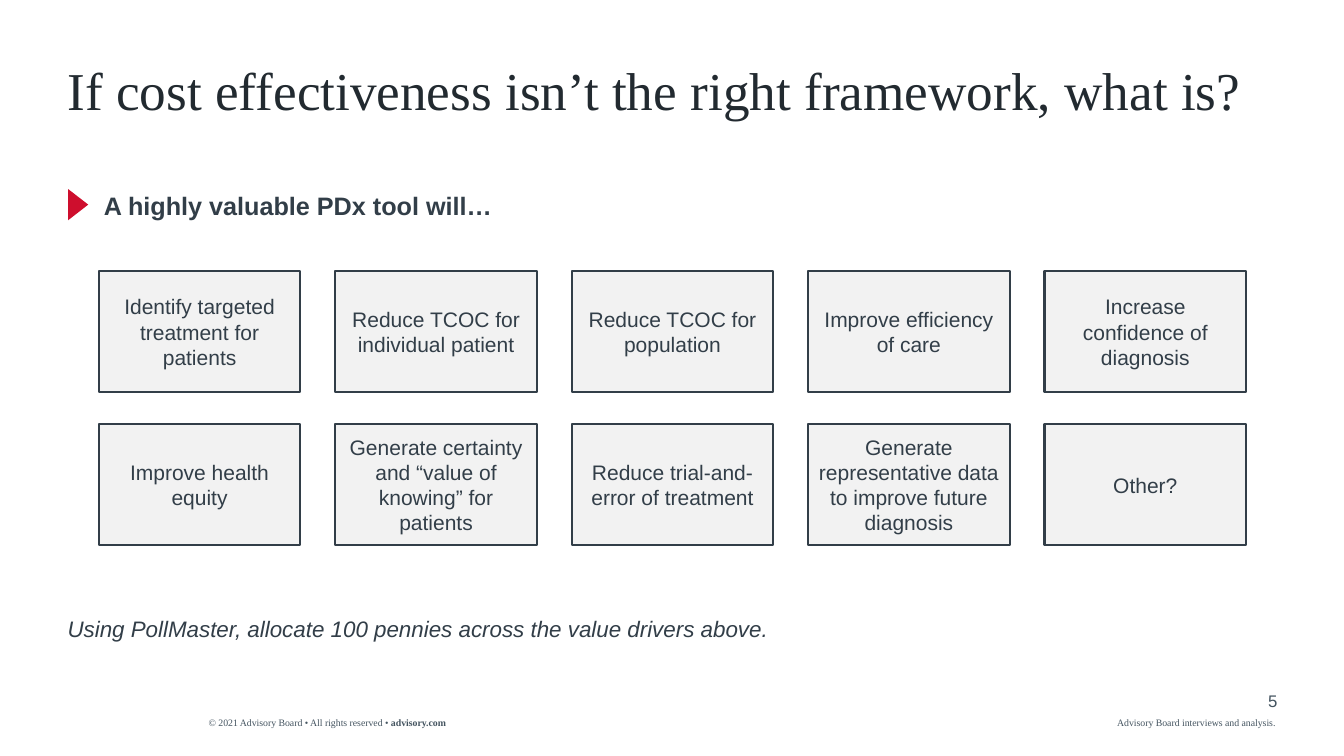
"""Build the slide on value drivers for a PDx tool."""
from dataclasses import dataclass

import pptx
import pptx.dml.color
import pptx.enum.shapes
import pptx.enum.text
import pptx.util

Inches = pptx.util.Inches
RGBColor = pptx.dml.color.RGBColor
ALIGN = pptx.enum.text.PP_ALIGN
ANCHOR = pptx.enum.text.MSO_ANCHOR
SHAPE = pptx.enum.shapes.MSO_SHAPE

INK = RGBColor(0x22, 0x2A, 0x30)
SLATE = RGBColor(0x32, 0x3E, 0x48)
GRAY = RGBColor(0x44, 0x54, 0x60)
PALE = RGBColor(0xF2, 0xF2, 0xF2)
RED = RGBColor(0xCE, 0x0E, 0x2D)
SANS = "Arial"
SERIF = "Times New Roman"

COLUMNS = 5
GRID_LEFT, GRID_TOP = 0.98, 2.69
STEP_X, STEP_Y = 2.345, 1.52
BOX_W, BOX_H = 2, 1.2

DRIVERS = [
    "Identify targeted treatment for patients",
    "Reduce TCOC for individual patient",
    "Reduce TCOC for population",
    "Improve efficiency of care",
    "Increase confidence of diagnosis",
    "Improve health equity",
    "Generate certainty and “value of knowing” for patients",
    "Reduce trial-and-error of treatment",
    "Generate representative data to improve future diagnosis",
    "Other?",
]


@dataclass
class Label:
    text: str
    left: float
    top: float
    width: float
    height: float
    size: float
    font: str = SANS
    color: RGBColor = SLATE
    bold: bool = False
    italic: bool = False
    align: ALIGN = ALIGN.LEFT
    anchor: ANCHOR = ANCHOR.TOP
    bold_tail: str = ""


LABELS = [
    Label("© 2021 Advisory Board • All rights reserved • ", 2.07, 7.11, 3.26, 0.12, 7,
          font=SERIF, color=GRAY, bold_tail="advisory.com"),
    Label("Advisory Board interviews and analysis.", 11.08, 7.11, 1.59, 0.12, 7,
          font=SERIF, color=GRAY),
    Label("5", 12.17, 6.85, 0.5, 0.2, 12, color=GRAY, align=ALIGN.RIGHT),
    Label("A highly valuable PDx tool will…", 1.03, 1.89, 11.14, 0.3, 18,
          bold=True, anchor=ANCHOR.BOTTOM),
    Label("Using PollMaster, allocate 100 pennies across the value drivers above.",
          0.67, 6.1, 11.05, 0.27, 16, italic=True),
]


def write(tf, text: str, *, size: float, font: str = SANS, color: RGBColor = SLATE,
          bold: bool = False, italic: bool = False, align: ALIGN = ALIGN.LEFT,
          anchor: ANCHOR = ANCHOR.TOP, inset: float = 0, spacing: float = 1,
          bold_tail: str = "") -> None:
    tf.word_wrap = True
    tf.auto_size = pptx.enum.text.MSO_AUTO_SIZE.NONE
    tf.vertical_anchor = anchor
    tf.margin_left = tf.margin_right = Inches(inset)
    tf.margin_top = tf.margin_bottom = 0
    p = tf.paragraphs[0]
    p.alignment = align
    p.line_spacing = spacing
    for part, heavy in ((text, bold), (bold_tail, True)):
        if part:
            r = p.add_run()
            r.text = part
            r.font.size = pptx.util.Pt(size)
            r.font.name = font
            r.font.color.rgb = color
            r.font.bold = heavy
            r.font.italic = italic


def add_label(slide, label: Label) -> None:
    sp = slide.shapes.add_textbox(Inches(label.left), Inches(label.top),
                                  Inches(label.width), Inches(label.height))
    write(sp.text_frame, label.text, size=label.size, font=label.font,
          color=label.color, bold=label.bold, italic=label.italic,
          align=label.align, anchor=label.anchor, bold_tail=label.bold_tail)


def add_title(slide, text: str) -> None:
    sp = slide.shapes.title
    sp.left, sp.top = Inches(0.67), Inches(0.64)
    sp.width, sp.height = Inches(12), Inches(0.59)
    write(sp.text_frame, text, size=38, font=SERIF, color=INK, spacing=0.9)


def add_driver(slide, index: int, text: str) -> None:
    row, column = divmod(index, COLUMNS)
    sp = slide.shapes.add_shape(
        SHAPE.RECTANGLE, Inches(GRID_LEFT + column * STEP_X),
        Inches(GRID_TOP + row * STEP_Y), Inches(BOX_W), Inches(BOX_H))
    sp.shadow.inherit = False
    sp.fill.solid()
    sp.fill.fore_color.rgb = PALE
    sp.line.color.rgb = SLATE
    sp.line.width = pptx.util.Pt(1.5)
    write(sp.text_frame, text, size=15, align=ALIGN.CENTER,
          anchor=ANCHOR.MIDDLE, inset=0.1)


def add_marker(slide) -> None:
    sp = slide.shapes.add_shape(SHAPE.ISOSCELES_TRIANGLE, Inches(0.62), Inches(1.93),
                                Inches(0.31), Inches(0.2))
    sp.rotation = 90
    sp.shadow.inherit = False
    sp.fill.solid()
    sp.fill.fore_color.rgb = RED
    sp.line.fill.background()


def main() -> None:
    prs = pptx.Presentation()
    prs.slide_width, prs.slide_height = Inches(13.33), Inches(7.5)
    slide = prs.slides.add_slide(prs.slide_layouts.get_by_name("Title Only"))
    add_title(slide, "If cost effectiveness isn’t the right framework, what is?")
    for index, text in enumerate(DRIVERS):
        add_driver(slide, index, text)
    add_marker(slide)
    for label in LABELS:
        add_label(slide, label)
    prs.save("out.pptx")


if __name__ == "__main__":
    main()
